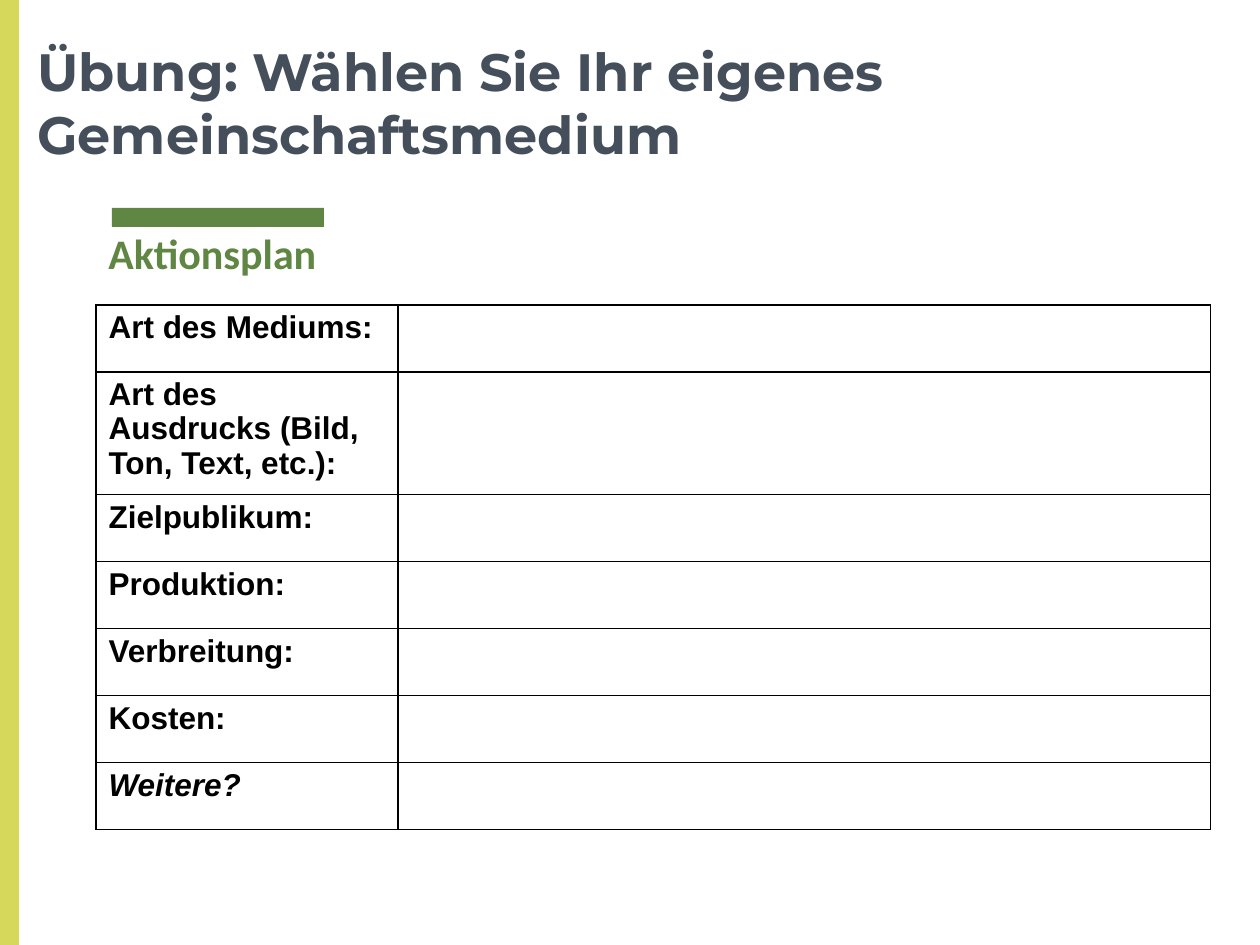
from pptx import Presentation
from pptx import util as u
from pptx.dml.color import RGBColor
from pptx.enum import shapes, text
from pptx.oxml import parse_xml
from pptx.oxml.ns import nsdecls

EMU_PER_PX = 914400 // 126
GREEN, LIME, SLATE, BLACK = "608643", "D5D85A", "454F5B", "000000"
LABELS = [
    "Art des Mediums:",
    "Art des Ausdrucks (Bild, Ton, Text, etc.):",
    "Zielpublikum:",
    "Produktion:",
    "Verbreitung:",
    "Kosten:",
    "Weitere?",
]
ROW_HEIGHT, TALL_ROW_HEIGHT = 67, 118
COLUMN_WIDTHS = [302, 813]


def px(*lengths):
    return [u.Emu(length * EMU_PER_PX) for length in lengths]


def color(value):
    return RGBColor.from_string(value)


def write(frame, content, hex_color, line_spacing=1.0, **font_format):
    paragraph = frame.paragraphs[0]
    paragraph.line_spacing = line_spacing
    run = paragraph.add_run()
    run.text = content
    run.font.color.rgb = color(hex_color)
    for name, value in font_format.items():
        setattr(run.font, name, value)


def add_bar(slide, box, fill):
    bar = slide.shapes.add_shape(shapes.MSO_SHAPE.RECTANGLE, *px(*box))
    bar.shadow.inherit = False
    bar.fill.solid()
    bar.fill.fore_color.rgb = color(fill)
    bar.line.fill.background()


def add_text(slide, box, content, hex_color, anchor, **font_format):
    frame = slide.shapes.add_textbox(*px(*box)).text_frame
    frame.word_wrap = True
    frame.vertical_anchor = anchor
    for side in ("left", "top", "right", "bottom"):
        setattr(frame, f"margin_{side}", u.Inches(0.1))
    write(frame, content, hex_color, **font_format)


def format_cell(cell):
    """Give the cell thin black borders and no fill."""
    properties = cell._tc.get_or_add_tcPr()
    for edge in ("lnL", "lnR", "lnT", "lnB"):
        properties.append(parse_xml(
            f'<a:{edge} {nsdecls("a")} w="{u.Pt(0.75)}"><a:solidFill>'
            f'<a:srgbClr val="{BLACK}"/></a:solidFill></a:{edge}>'))
    cell.fill.background()


def add_plan_table(slide, left, top):
    heights = [TALL_ROW_HEIGHT if row == 1 else ROW_HEIGHT
               for row in range(len(LABELS))]
    table = slide.shapes.add_table(
        len(LABELS), len(COLUMN_WIDTHS),
        *px(left, top, sum(COLUMN_WIDTHS), sum(heights))).table
    table.first_row = table.horz_banding = False
    for column, width in zip(table.columns, px(*COLUMN_WIDTHS)):
        column.width = width
    for row, height, label in zip(table.rows, px(*heights), LABELS):
        row.height = height
        for cell in row.cells:
            format_cell(cell)
        write(row.cells[0].text_frame, label, BLACK, line_spacing=0.97,
              name="Arial", size=u.Pt(18), bold=True,
              italic=label == "Weitere?")


def main():
    presentation = Presentation()
    presentation.slide_width, presentation.slide_height = u.Inches(10), u.Inches(7.5)
    slide = presentation.slides.add_slide(presentation.slide_layouts[6])
    add_bar(slide, (112, 208, 212, 19), GREEN)
    add_bar(slide, (0, 0, 19, 945), LIME)
    add_text(slide, (25, 0, 1140, 178),
             "Übung: Wählen Sie Ihr eigenes Gemeinschaftsmedium", SLATE,
             text.MSO_ANCHOR.BOTTOM, name="Montserrat", size=u.Pt(30), bold=True)
    add_text(slide, (96, 215, 1070, 633), "Aktionsplan", GREEN,
             text.MSO_ANCHOR.TOP, name="Calibri", size=u.Pt(24), bold=True)
    add_plan_table(slide, 96, 305)
    presentation.save("out.pptx")


if __name__ == "__main__":
    main()
